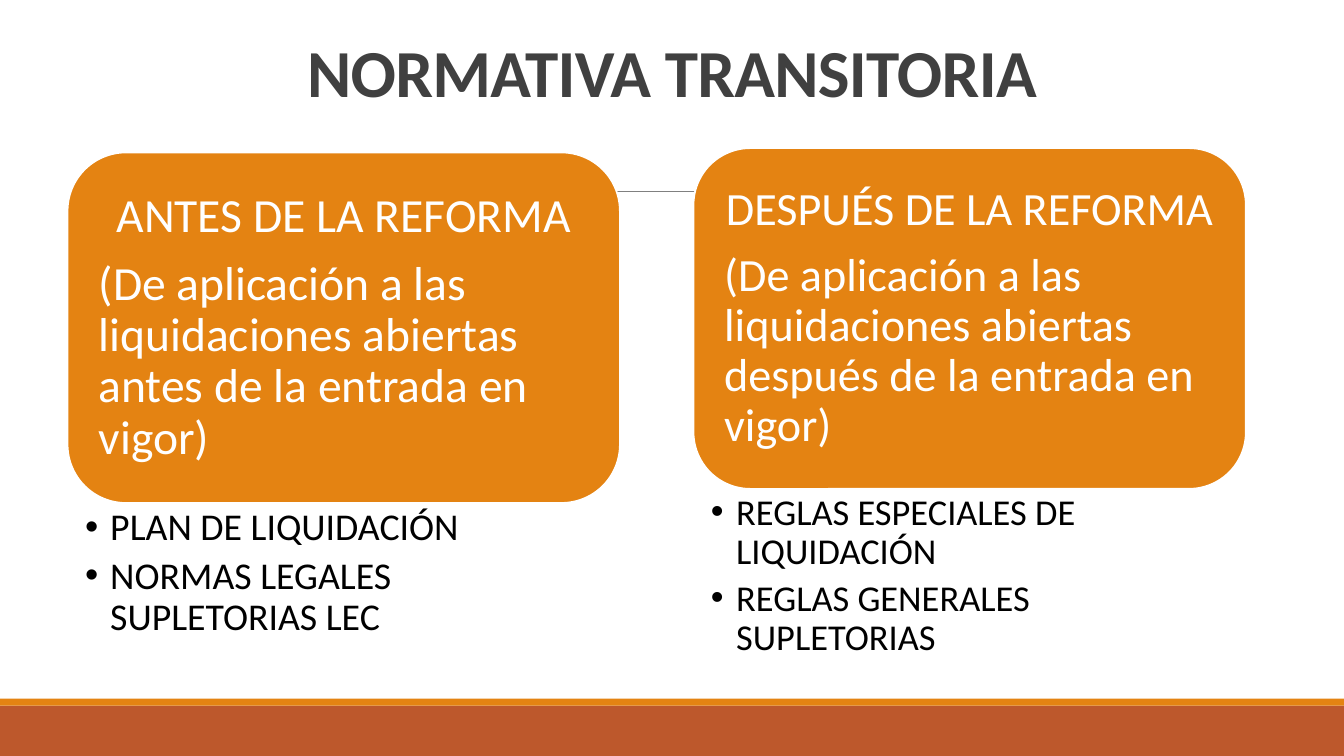
from lxml import etree
from pptx import Presentation
from pptx.dml.color import RGBColor
from pptx.enum.shapes import MSO_CONNECTOR, MSO_SHAPE
from pptx.enum.text import MSO_ANCHOR, PP_ALIGN
from pptx.oxml.ns import qn
from pptx.util import Pt

RECTANGLE = MSO_SHAPE.RECTANGLE
ROUNDED = MSO_SHAPE.ROUNDED_RECTANGLE
STRAIGHT = MSO_CONNECTOR.STRAIGHT
TOP, MIDDLE, BOTTOM = MSO_ANCHOR.TOP, MSO_ANCHOR.MIDDLE, MSO_ANCHOR.BOTTOM
LEFT, CENTER = PP_ALIGN.LEFT, PP_ALIGN.CENTER

WHITE = RGBColor(0xFF, 0xFF, 0xFF)
BLACK = RGBColor(0x00, 0x00, 0x00)
DARK_GRAY = RGBColor(0x40, 0x40, 0x40)
GRAY = RGBColor(0x80, 0x80, 0x80)
ORANGE = RGBColor(0xE4, 0x83, 0x12)
RUST = RGBColor(0xBD, 0x58, 0x2C)

SLIDE_WIDTH, SLIDE_HEIGHT = 960, 540
COLUMN_WIDTH = 394.56

presentation = Presentation()
presentation.slide_width = Pt(SLIDE_WIDTH)
presentation.slide_height = Pt(SLIDE_HEIGHT)
slide = presentation.slides.add_slide(presentation.slide_layouts[6])


def add_block(left, top, width, height, shape_type=None, fill=None, outline=None):
    """Add a preset shape, or a text box when no shape type is given."""
    box = Pt(left), Pt(top), Pt(width), Pt(height)
    if shape_type is None:
        return slide.shapes.add_textbox(*box)
    shape = slide.shapes.add_shape(shape_type, *box)
    shape.shadow.inherit = False
    shape.fill.solid()
    shape.fill.fore_color.rgb = fill
    if outline is None:
        shape.line.fill.background()
    else:
        shape.line.color.rgb = outline
        shape.line.width = Pt(1.25)
    return shape


def write_text(shape, texts, size, color, alignments, anchor=TOP, margins=(7.2, 3.6, 7.2, 3.6),
               line_spacing=0.9, space_after=0, bold=False, spacing=None, bullet=False):
    frame = shape.text_frame
    frame.word_wrap = True
    frame.vertical_anchor = anchor
    frame.margin_left, frame.margin_top, frame.margin_right, frame.margin_bottom = map(Pt, margins)
    for index, (text, alignment) in enumerate(zip(texts, alignments)):
        paragraph = frame.add_paragraph() if index else frame.paragraphs[0]
        paragraph.alignment = alignment
        paragraph.line_spacing = line_spacing
        paragraph.space_after = Pt(space_after)
        run = paragraph.add_run()
        run.text = text
        run.font.name = "Calibri"
        run.font.size = Pt(size)
        run.font.bold = bold
        run.font.color.rgb = color
        if spacing is not None:
            run.font._element.set("spc", str(round(spacing * 100)))
        if bullet:
            properties = paragraph._p.get_or_add_pPr()
            properties.set("marL", str(Pt(18)))
            properties.set("indent", str(-Pt(18)))
            etree.SubElement(properties, qn("a:buFont")).set("typeface", "Arial")
            etree.SubElement(properties, qn("a:buChar")).set("char", "•")


# Footer bands and rule
add_block(0, 504, SLIDE_WIDTH, 36, RECTANGLE, RUST)
add_block(0, 499, SLIDE_WIDTH, 5, RECTANGLE, ORANGE)
rule = slide.shapes.add_connector(STRAIGHT, Pt(94.3), Pt(136.8), Pt(879.1), Pt(136.8))
rule.line.color.rgb = GRAY
rule.line.width = Pt(0.5)
etree.SubElement(rule._element.spPr, qn("a:effectLst"))

# Title
title = add_block(48, 21.6, 864, 61.2, RECTANGLE, WHITE)
write_text(title, ["NORMATIVA TRANSITORIA"], 48, DARK_GRAY, [CENTER], anchor=BOTTOM,
           line_spacing=0.85, bold=True, spacing=-0.5)

# Columns: left, top, card height, card size, card texts, list height, list size, list items
columns = [
    (48.24, 108.9, 250.4, 34,
     ["ANTES DE LA REFORMA",
      "(De aplicación a las liquidaciones abiertas antes de la entrada en vigor)"],
     102.2, 27, ["PLAN DE LIQUIDACIÓN", "NORMAS LEGALES SUPLETORIAS LEC"]),
    (495.36, 105.8, 243.4, 33,
     ["DESPUÉS DE LA REFORMA",
      "(De aplicación a las liquidaciones abiertas después de la entrada en vigor)"],
     128.9, 26, ["REGLAS ESPECIALES DE LIQUIDACIÓN", "REGLAS GENERALES SUPLETORIAS"]),
]
for left, top, card_height, card_size, card_texts, list_height, list_size, items in columns:
    card = add_block(left, top, COLUMN_WIDTH, card_height, ROUNDED, ORANGE, WHITE)
    write_text(card, card_texts, card_size, WHITE, [CENTER, LEFT], anchor=MIDDLE,
               margins=(10, 10, 10, 10), space_after=0.35 * card_size)
    rules_list = add_block(left, top + card_height, COLUMN_WIDTH, list_height)
    write_text(rules_list, items, list_size, BLACK, [LEFT, LEFT],
               margins=(12.5, 3.6, 18.7, 3.6), space_after=0.2 * list_size, bullet=True)

presentation.save("out.pptx")
